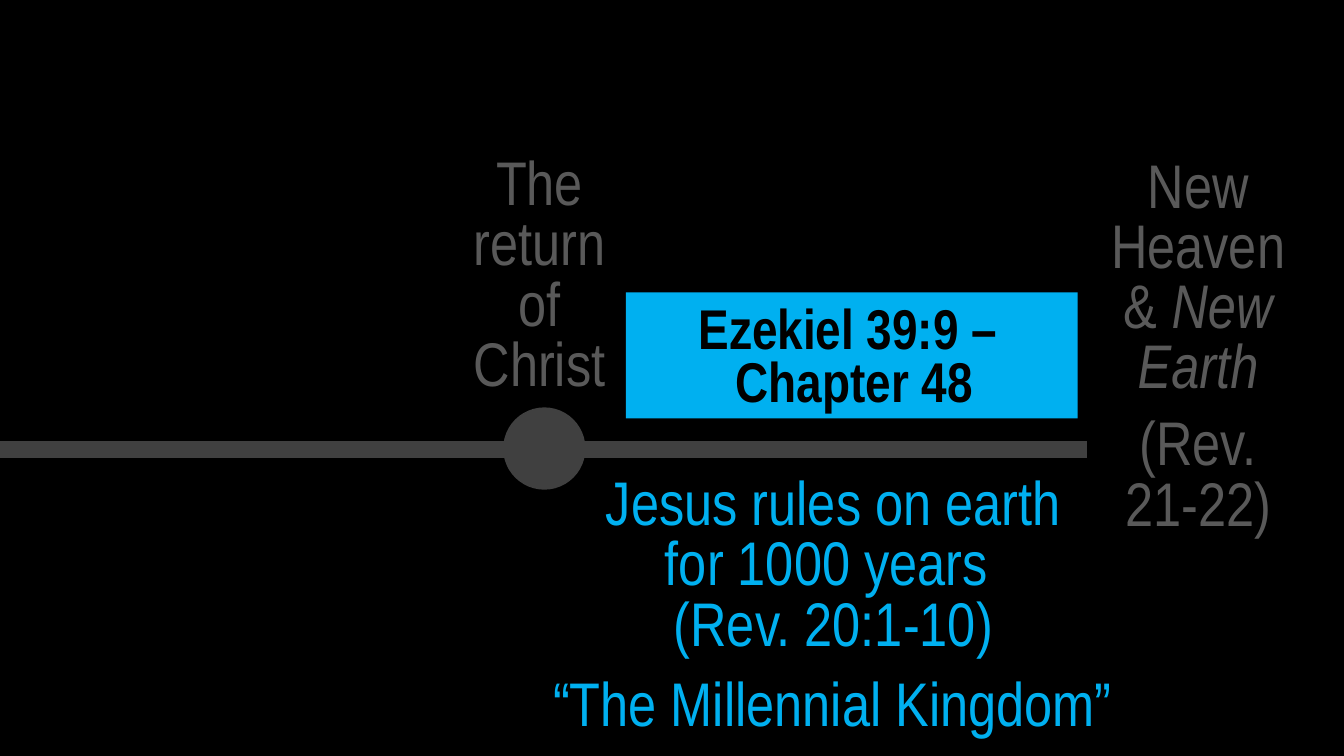
"""Build a timeline slide on the thousand-year reign."""
from lxml import etree
from pptx import Presentation
from pptx.dml.color import RGBColor
from pptx.enum.shapes import MSO_CONNECTOR, MSO_SHAPE
from pptx.enum.text import MSO_ANCHOR, PP_ALIGN
from pptx.oxml.ns import qn
from pptx.util import Inches, Pt

LINE = MSO_CONNECTOR.STRAIGHT
RECT, OVAL = MSO_SHAPE.RECTANGLE, MSO_SHAPE.OVAL
TOP, MID = MSO_ANCHOR.TOP, PP_ALIGN.CENTER
COLS, ROWS = 16, 9
FONT = "Arial Narrow"
HEX = {"back": "000000", "axis": "404040", "dim": "595959", "blue": "00B0F0"}


def tint(name):
    """Return the named colour."""
    return RGBColor.from_string(HEX[name])


def write(frame, text, color="dim", size=44, lead=43, bold=None, left=0.04,
          pads=(0.1, 0.05, 0.1, 0.05)):
    """Fill a frame; newlines break lines, blank lines split paragraphs, stars mark italics."""
    frame.word_wrap = True
    frame.vertical_anchor = TOP
    (frame.margin_left, frame.margin_top,
     frame.margin_right, frame.margin_bottom) = map(Inches, pads)
    for i, part in enumerate(text.split("\n\n")):
        para = frame.add_paragraph() if i else frame.paragraphs[0]
        para.alignment = MID
        para.line_spacing = Pt(lead)
        para.space_after = Pt(12)
        props = para._p.get_or_add_pPr()
        props.set("marL", str(Inches(left)))
        props.set("indent", "0")
        for j, row in enumerate(part.split("\n")):
            if j:
                para.add_line_break()
            for k, piece in enumerate(row.split("*")):
                if piece:
                    run = para.add_run()
                    run.text = piece
                    font = run.font
                    font.name, font.size, font.bold = FONT, Pt(size), bold
                    font.italic = k % 2 == 1
                    font.color.rgb = tint(color)


class Deck:
    """Hold the grid, the style and the current slide."""

    def __init__(self):
        """Start a dark blank slide."""
        self.file = Presentation()
        self.file.slide_width = Inches(13.33)
        self.file.slide_height = Inches(7.5)
        self.slide = self.file.slides.add_slide(self.file.slide_layouts[6])
        fill = self.slide.background.fill
        fill.solid()
        fill.fore_color.rgb = tint("back")

    def grid(self, *spans):
        """Turn column and row pairs into lengths."""
        units = (self.file.slide_width / COLS, self.file.slide_height / ROWS)
        return [round(span * units[i % 2]) for i, span in enumerate(spans)]

    def line(self, *ends, color="axis", width=12):
        """Draw a straight line."""
        line = self.slide.shapes.add_connector(LINE, *self.grid(*ends))
        line.line.color.rgb = tint(color)
        line.line.width = Pt(width)
        etree.SubElement(line._element.spPr, qn("a:effectLst"))

    def shape(self, kind, *area, color):
        """Draw a flat filled shape."""
        shape = self.slide.shapes.add_shape(kind, *self.grid(*area))
        shape.shadow.inherit = False
        shape.fill.solid()
        shape.fill.fore_color.rgb = tint(color)
        shape.line.fill.background()
        return shape

    def label(self, text, *area, **look):
        """Place a text box."""
        box = self.slide.shapes.add_textbox(*self.grid(*area))
        write(box.text_frame, text, **look)


def main():
    """Draw the timeline and save it."""
    deck = Deck()
    deck.line(-0.22, 5.35, 12.94, 5.35)
    deck.shape(OVAL, 5.99, 4.85, 0.98, 0.98, color="axis")
    deck.label("The return\nof Christ", 5.24, 1.82, 2.32, 1.67)
    deck.label("New Heaven & *New Earth*\n\n(Rev.\n21-22)", 12.91, 1.85, 2.66, 1.67)
    span = deck.shape(RECT, 7.45, 3.48, 5.38, 1.5, color="blue")
    write(span.text_frame, "Ezekiel 39:9 – \nChapter 48", color="back", size=40,
          lead=38, bold=True, left=0, pads=(0.1, 0.15, 0.05, 0.05))
    deck.label("Jesus rules on earth\nfor 1000 years \n(Rev. 20:1-10)",
               6.61, 5.63, 6.58, 1.67, color="blue")
    deck.label("“The Millennial Kingdom”", 6.35, 8.02, 7.08, 0.8, color="blue")
    deck.file.save("out.pptx")


if __name__ == "__main__":
    main()
